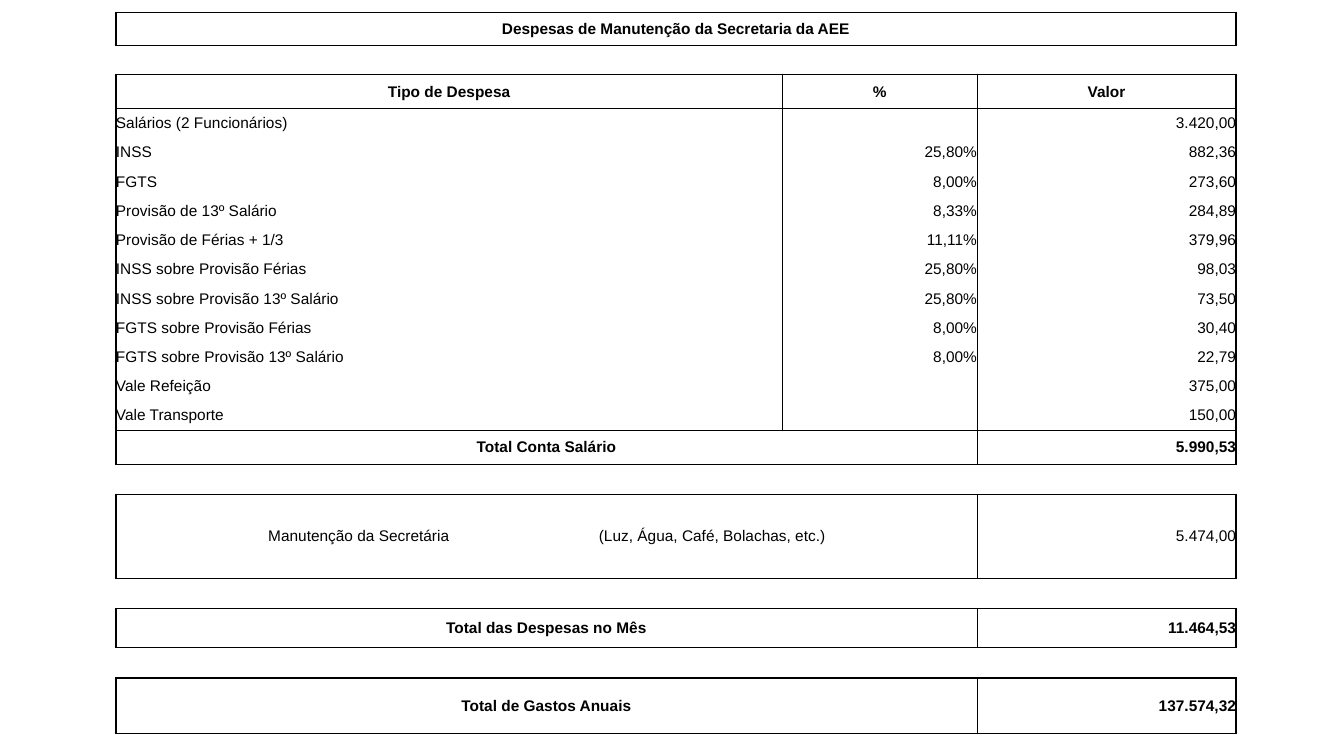
from lxml import etree
from pptx import Presentation
from pptx.dml.color import RGBColor
from pptx.enum.text import MSO_ANCHOR, PP_ALIGN
from pptx.oxml.ns import qn
from pptx.util import Inches, Pt

LEFT, CENTER, RIGHT = PP_ALIGN.LEFT, PP_ALIGN.CENTER, PP_ALIGN.RIGHT
MIDDLE = MSO_ANCHOR.MIDDLE
BLACK = RGBColor(0, 0, 0)

# The slide is a grid of square units, 100 to the inch
UNIT = Inches(0.01)
SLIDE_COLS, SLIDE_ROWS = 1333, 750
TABLE_LEFT, TABLE_TOP = 29, 12
COLUMNS = [86, 661, 193, 257, 86]
OUTER, INNER = 1, 0.5  # rule widths in points

# Row kinds
TITLE, GAP, HEAD, ITEM, TOTAL = "title", "gap", "head", "item", "total"
SPAN_END = {TITLE: 3, TOTAL: 2}

EXPENSES = [
    ("Salários (2 Funcionários)", "", "3.420,00"),
    ("INSS", "25,80%", "882,36"),
    ("FGTS", "8,00%", "273,60"),
    ("Provisão de 13º Salário", "8,33%", "284,89"),
    ("Provisão de Férias + 1/3", "11,11%", "379,96"),
    ("INSS sobre Provisão Férias", "25,80%", "98,03"),
    ("INSS sobre Provisão 13º Salário", "25,80%", "73,50"),
    ("FGTS sobre Provisão Férias", "8,00%", "30,40"),
    ("FGTS sobre Provisão 13º Salário", "8,00%", "22,79"),
    ("Vale Refeição", "", "375,00"),
    ("Vale Transporte", "", "150,00"),
]
MAINTENANCE = "Manutenção da Secretária\t(Luz, Água, Café, Bolachas, etc.)"
MAINTENANCE_INDENT, MAINTENANCE_TAB = 151, 328

# Each row: kind, height, texts of the three inner columns
NO_TEXT = ("", "", "")
ROWS = [
    (TITLE, 33, ("Despesas de Manutenção da Secretaria da AEE", "", "")),
    (GAP, 29, NO_TEXT),
    (HEAD, 34, ("Tipo de Despesa", "%", "Valor")),
    *((ITEM, 29, expense) for expense in EXPENSES),
    (TOTAL, 34, ("Total Conta Salário", "", "5.990,53")),
    (GAP, 30, NO_TEXT),
    (TOTAL, 83, (MAINTENANCE, "", "5.474,00")),
    (GAP, 30, NO_TEXT),
    (TOTAL, 39, ("Total das Despesas no Mês", "", "11.464,53")),
    (GAP, 30, NO_TEXT),
    (TOTAL, 55, ("Total de Gastos Anuais", "", "137.574,32")),
]
KINDS = [kind for kind, _, _ in ROWS]


def write(cell, text, font="Arial", size=11, bold=False, color=BLACK, align=LEFT):
    """Fill a cell with one formatted paragraph."""
    cell.margin_left = cell.margin_right = cell.margin_top = cell.margin_bottom = 0
    cell.vertical_anchor = MIDDLE
    paragraph = cell.text_frame.paragraphs[0]
    paragraph.alignment = align
    if not text:
        etree.SubElement(paragraph._p, qn("a:endParaRPr"), sz=str(size * 100))
        return
    run = paragraph.add_run()
    run.text = text
    run.font.name, run.font.size, run.font.bold = font, Pt(size), bold
    run.font.color.rgb = color


def upright_width(kind, boundary):
    """Width of the rule right of the column numbered boundary."""
    if kind == GAP or boundary not in range(4):
        return 0
    if boundary in (0, 3):
        return OUTER
    if kind == TITLE or (kind == TOTAL and boundary == 1):
        return 0
    return INNER


def level_width(boundary, column):
    """Width of the rule above the row numbered boundary."""
    if column not in (1, 2, 3) or KINDS[max(boundary - 1, 0):boundary + 1] == [ITEM, ITEM]:
        return 0
    return OUTER


class ExpenseSlide:
    """Holds the presentation, its style and the current slide."""

    def __init__(self):
        self.deck = Presentation()
        self.deck.slide_width = SLIDE_COLS * UNIT
        self.deck.slide_height = SLIDE_ROWS * UNIT
        self.slide = self.deck.slides.add_slide(self.deck.slide_layouts[6])

    def expense_table(self):
        heights = [height for _, height, _ in ROWS]
        table = self.slide.shapes.add_table(
            len(ROWS), len(COLUMNS), TABLE_LEFT * UNIT, TABLE_TOP * UNIT,
            sum(COLUMNS) * UNIT, sum(heights) * UNIT).table
        table.first_row = table.horz_banding = False
        for column, width in zip(table.columns, COLUMNS):
            column.width = width * UNIT
        for row, height in zip(table.rows, heights):
            row.height = height * UNIT
        for index, (kind, _, texts) in enumerate(ROWS):
            self.table_row(table, index, kind, ("", *texts, ""))

    def table_row(self, table, index, kind, texts):
        for column, text in enumerate(texts):
            cell = table.cell(index, column)
            if kind in (TITLE, HEAD) or (kind == TOTAL and column == 1):
                align = CENTER
            else:
                align = RIGHT if column > 1 else LEFT
            bold = kind in (TITLE, HEAD, TOTAL) and ROWS[index][2][0] != MAINTENANCE
            # The maintenance amount is regular, like its label
            write(cell, text, bold=bold, align=align)
            if text == MAINTENANCE:
                self.two_part_label(cell)
            end = SPAN_END.get(kind, column) if column == 1 else column
            self.cell_rules(cell, L=upright_width(kind, column - 1),
                            R=upright_width(kind, end),
                            T=level_width(index, column),
                            B=level_width(index + 1, column))
            cell.fill.background()
        if kind in SPAN_END:
            table.cell(index, 1).merge(table.cell(index, SPAN_END[kind]))

    def two_part_label(self, cell):
        """Indent the label and set its second part on a tab stop."""
        cell.margin_left = MAINTENANCE_INDENT * UNIT
        paragraph = cell.text_frame.paragraphs[0]
        paragraph.alignment = LEFT
        stops = etree.SubElement(paragraph._p.get_or_add_pPr(), qn("a:tabLst"))
        etree.SubElement(stops, qn("a:tab"), pos=str(MAINTENANCE_TAB * UNIT), algn="l")

    def cell_rules(self, cell, **widths):
        properties = cell._tc.get_or_add_tcPr()
        for side, width in widths.items():
            line = etree.SubElement(properties, qn(f"a:ln{side}"), w=str(Pt(width)))
            if width:
                fill = etree.SubElement(line, qn("a:solidFill"))
                etree.SubElement(fill, qn("a:srgbClr"), val=str(BLACK))
            else:
                etree.SubElement(line, qn("a:noFill"))


def main():
    page = ExpenseSlide()
    page.expense_table()
    page.deck.save("out.pptx")


if __name__ == "__main__":
    main()
